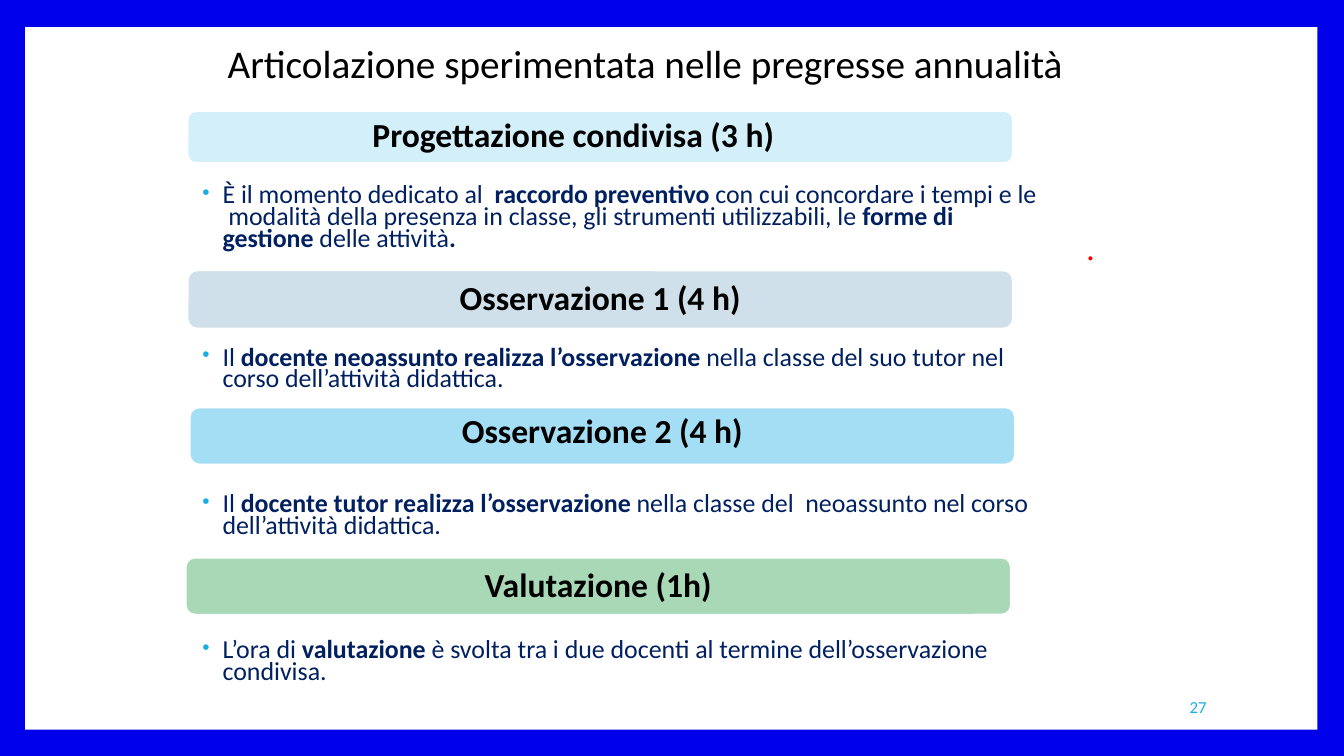
from lxml import etree
from pptx import Presentation
from pptx import util as u
from pptx.dml.color import RGBColor
from pptx.enum import shapes, text
from pptx.oxml.ns import qn

Pt = u.Pt
COLORS = {
    "frame": "0000EA", "white": "FFFFFF", "black": "000000",
    "navy": "002060", "accent": "1CADE4", "red": "FF0000",
    "ice": "D2EFFA", "steel": "CFE0EA", "sky": "A4DEF4", "mint": "A9D8B7",
}
BAND_WIDTH = 589.7
DETAIL_LEFT, DETAIL_WIDTH = 133.9, 616.3

# Each phase: heading, fill, band (left, top, height), text insets (left, bottom),
# top of the detail, detail runs (every second one is bold).
PHASES = [
    ("Progettazione condivisa (3 h)", "ice", (133.9, 79.2, 37.4), (130.3, 4), 129.6,
     ["È il momento dedicato al  ", "raccordo preventivo ",
      "con cui concordare i tempi e le  modalità della presenza in classe, "
      "gli strumenti utilizzabili, le ", "forme di gestione ",
      "delle attività", "."]),
    ("Osservazione 1 (4 h)", "steel", (133.9, 193, 41.8), (4, 4), 245.5,
     ["Il ", "docente neoassunto realizza l’osservazione ",
      "nella classe del suo tutor nel corso dell’attività didattica."]),
    ("Osservazione 2 (4 h)", "sky", (135.4, 290.9, 41), (4, 9), 350,
     ["Il ", "docente tutor realizza l’osservazione ",
      "nella classe del  neoassunto nel corso dell’attività didattica."]),
    ("Valutazione (1h)", "mint", (132.5, 398.2, 41), (4, 4), 454.5,
     ["L’ora di ", "valutazione",
      " è svolta tra i due docenti al termine dell’osservazione condivisa."]),
]


def color(name):
    return RGBColor.from_string(COLORS[name])


def style(font, size, color_name, bold=False, name="Calibri"):
    font.name, font.size, font.bold = name, Pt(size), bold
    font.color.rgb = color(color_name)


def add_panel(slide, kind, box, fill):
    """Add a filled shape without shadow or outline."""
    shape = slide.shapes.add_shape(kind, *map(Pt, box))
    shape.shadow.inherit = False
    shape.fill.solid()
    shape.fill.fore_color.rgb = color(fill)
    shape.line.fill.background()
    return shape


def add_label(slide, box, wording, size, color_name, align, wrap=True, **font):
    frame = slide.shapes.add_textbox(*map(Pt, box)).text_frame
    frame.word_wrap = wrap
    frame.text = wording
    paragraph = frame.paragraphs[0]
    paragraph.alignment = align
    style(paragraph.runs[0].font, size, color_name, **font)
    return frame


def add_band(slide, box, heading, fill, insets):
    band = add_panel(slide, shapes.MSO_SHAPE.ROUNDED_RECTANGLE, box, fill)
    band.line.color.rgb = color("white")
    band.line.width = Pt(1.5)
    frame = band.text_frame
    frame.margin_left, frame.margin_bottom = map(Pt, insets)
    frame.margin_right = frame.margin_top = Pt(4)
    frame.vertical_anchor = text.MSO_ANCHOR.MIDDLE
    frame.text = heading
    paragraph = frame.paragraphs[0]
    indented = insets[0] > 4
    paragraph.alignment = text.PP_ALIGN.LEFT if indented else text.PP_ALIGN.CENTER
    paragraph.line_spacing = 0.9
    style(paragraph.runs[0].font, 24, "black", bold=True)


def add_bullet(paragraph):
    properties = paragraph._p.get_or_add_pPr()
    properties.set("marL", str(Pt(18)))
    properties.set("indent", str(-Pt(14.4)))
    bullet_color = etree.SubElement(properties, qn("a:buClr"))
    etree.SubElement(bullet_color, qn("a:srgbClr"), val=COLORS["accent"])
    etree.SubElement(properties, qn("a:buSzPct"), val="80000")
    etree.SubElement(properties, qn("a:buFont"), typeface="Arial")
    etree.SubElement(properties, qn("a:buChar"), char="•")


def add_detail(slide, box, pieces):
    frame = slide.shapes.add_textbox(*map(Pt, box)).text_frame
    frame.word_wrap = True
    paragraph = frame.paragraphs[0]
    add_bullet(paragraph)
    paragraph.line_spacing = 0.7
    for index, piece in enumerate(pieces):
        run = paragraph.add_run()
        run.text = piece
        style(run.font, 18.5, "navy", bold=index % 2 == 1)


def add_phase(slide, phase):
    heading, fill, (left, top, height), insets, detail_top, pieces = phase
    add_detail(slide, (DETAIL_LEFT, detail_top, DETAIL_WIDTH, 60), pieces)
    add_band(slide, (left, top, BAND_WIDTH, height), heading, fill, insets)


def main():
    presentation = Presentation()
    presentation.slide_width, presentation.slide_height = Pt(960), Pt(540)
    slide = presentation.slides.add_slide(presentation.slide_layouts[6])
    slide.background.fill.solid()
    slide.background.fill.fore_color.rgb = color("frame")
    add_panel(slide, shapes.MSO_SHAPE.RECTANGLE, (18, 19.4, 923, 501.8), "white")

    for phase in PHASES:
        add_phase(slide, phase)

    align = text.PP_ALIGN
    add_label(slide, (155.5, 24.5, 632.9, 41),
              "Articolazione sperimentata nelle pregresse annualità",
              28, "black", align.LEFT, wrap=False)
    add_label(slide, (681, 164.2, 195.8, 28.8), ".", 18, "red", align.CENTER,
              bold=True, name="Times New Roman")
    number = add_label(slide, (734.4, 490.3, 134.6, 28.8), "27", 12, "accent", align.RIGHT)
    number.vertical_anchor = text.MSO_ANCHOR.MIDDLE

    presentation.save("out.pptx")


if __name__ == "__main__":
    main()
